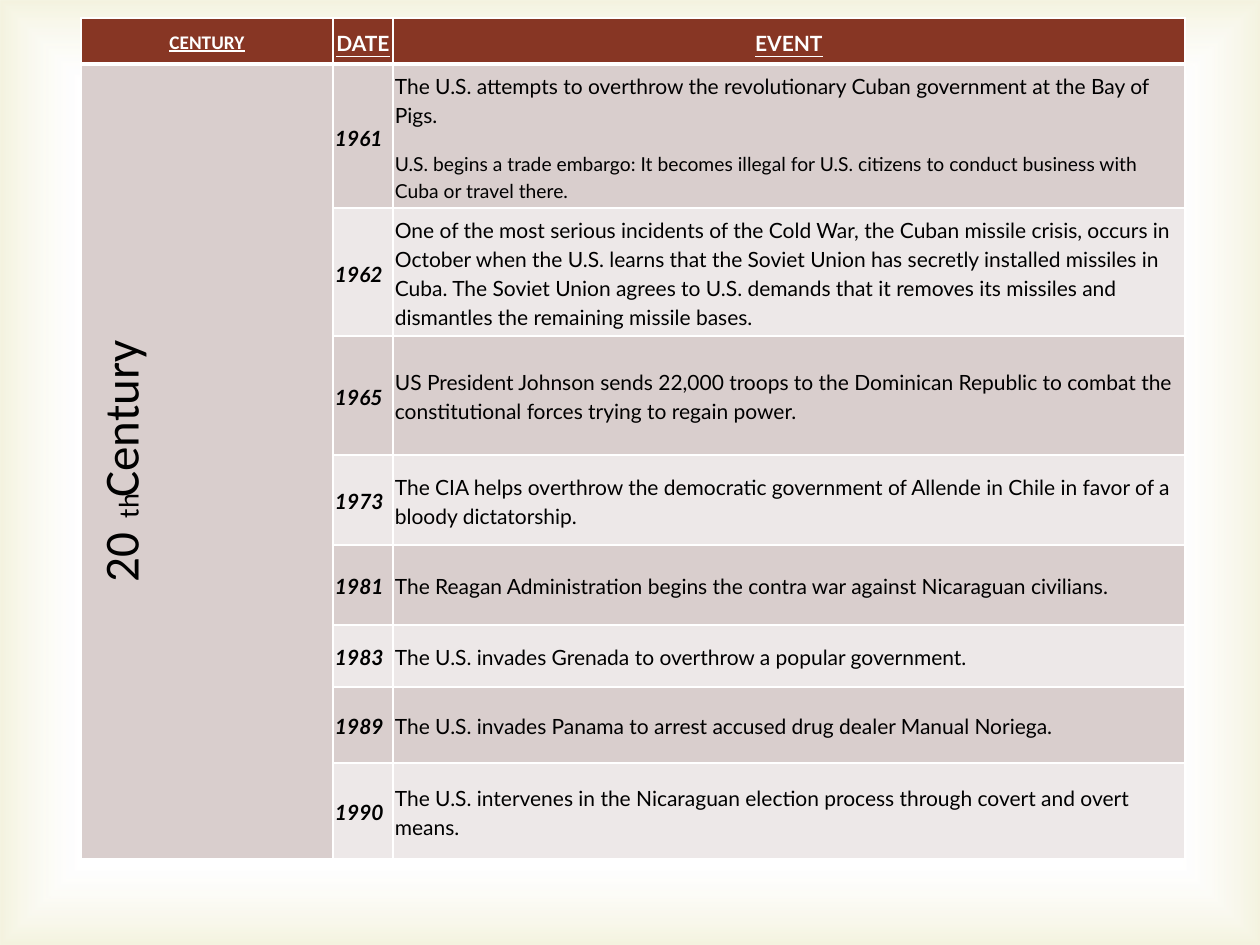
"""Builds a slide with a timeline table of U.S. interventions in the 20th century."""
from lxml.etree import SubElement
from pptx import Presentation
from pptx.dml.color import RGBColor
from pptx.enum.shapes import MSO_SHAPE as Shape
from pptx.enum.text import MSO_ANCHOR as Anchor, PP_ALIGN as Align
from pptx.oxml import parse_xml
from pptx.oxml.ns import nsdecls, qn
from pptx.util import Pt

PX = 914400 // 126
HEADER, DARK, LIGHT = "873624", "D9CECD", "EDE8E8"
WHITE, BLACK, GLOW = "FFFFFF", "000000", "D1CA75"

HEADINGS = [("CENTURY", 11, "Calibri"), ("DATE", 12, "Lato"), ("EVENT", 12, "Lato")]
CENTURY = [("20", 0), ("th", 30000), (" Century", 0)]
EVENTS = [
    ("1961", 144, [
        ("The U.S. attempts to overthrow the revolutionary Cuban government at the Bay of Pigs.", 12),
        ("U.S. begins a trade embargo: It becomes illegal for U.S. citizens to conduct business "
         "with Cuba or travel there.", 11)]),
    ("1962", 128, [
        ("One of the most serious incidents of the Cold War, the Cuban missile crisis, occurs in "
         "October when the U.S. learns that the Soviet Union has secretly installed missiles in "
         "Cuba. The Soviet Union agrees to U.S. demands that it removes its missiles and "
         "dismantles the remaining missile bases.", 12)]),
    ("1965", 119, [
        ("US President Johnson sends 22,000 troops to the Dominican Republic to combat the "
         "constitutional forces trying to regain power.", 12)]),
    ("1973", 90, [
        ("The CIA helps overthrow the democratic government of Allende in Chile in favor of a "
         "bloody dictatorship.", 12)]),
    ("1981", 80, [
        ("The Reagan Administration begins the contra war against Nicaraguan civilians.", 12)]),
    ("1983", 62, [("The U.S. invades Grenada to overthrow a popular government.", 12)]),
    ("1989", 76, [("The U.S. invades Panama to arrest accused drug dealer Manual Noriega.", 12)]),
    ("1990", 96, [
        ("The U.S. intervenes in the Nicaraguan election process through covert and overt means.", 12)]),
]
LEFT, TOP, HEADER_HEIGHT = 81, 18, 46
COLUMNS = [252, 60, 792]


def color(value):
    return RGBColor.from_string(value)


def add_glow(slide, width, height):
    box = slide.shapes.add_shape(Shape.RECTANGLE, 0, 0, width, height)
    box.shadow.inherit = False
    box.line.fill.background()
    stops = "".join(
        f'<a:gs pos="{place}000"><a:srgbClr val="{value}"><a:alpha val="{alpha}000"/></a:srgbClr></a:gs>'
        for place, value, alpha in [(83, WHITE, 11), (100, GLOW, 23)])
    gradient = parse_xml(
        f'<a:gradFill {nsdecls("a")} rotWithShape="1"><a:gsLst>{stops}</a:gsLst><a:path path="rect">'
        '<a:fillToRect l="50000" t="50000" r="50000" b="50000"/></a:path></a:gradFill>')
    box._element.spPr.find(qn("a:prstGeom")).addnext(gradient)


def format_cell(cell, fill, bottom=1):
    cell.fill.solid()
    cell.fill.fore_color.rgb = color(fill)
    cell.vertical_anchor = Anchor.MIDDLE
    cell.margin_left = cell.margin_right = cell.margin_top = cell.margin_bottom = 2 * PX
    properties = cell._tc.get_or_add_tcPr()
    for index, (side, width) in enumerate([("L", 1), ("R", 1), ("T", 1), ("B", bottom)]):
        border = parse_xml(f'<a:ln{side} {nsdecls("a")} w="{Pt(width)}"/>')
        SubElement(SubElement(border, qn("a:solidFill")), qn("a:srgbClr")).set("val", WHITE)
        properties.insert(index, border)


def add_para(cell, align=Align.LEFT):
    frame = cell.text_frame
    para = frame.add_paragraph() if frame.text else frame.paragraphs[0]
    para.alignment, para.line_spacing, para.space_after = align, 1.15, Pt(12)
    return para


def add_text(para, text, size=12, font="Lato", ink=BLACK, bold=False, italic=False,
             underline=False, baseline=0):
    span = para.add_run()
    span.text = text
    span.font.size, span.font.name = Pt(size), font
    span.font.bold, span.font.italic, span.font.underline = bold, italic, underline
    span.font.color.rgb = color(ink)
    if baseline:
        span._r.get_or_add_rPr().set("baseline", str(baseline))


def add_timeline(slide):
    heights = [HEADER_HEIGHT] + [height for _, height, _ in EVENTS]
    frame = slide.shapes.add_table(len(heights), len(COLUMNS), LEFT * PX, TOP * PX,
                                   sum(COLUMNS) * PX, sum(heights) * PX)
    table = frame.table
    for column, width in zip(table.columns, COLUMNS):
        column.width = width * PX
    for row, height in zip(table.rows, heights):
        row.height = height * PX

    for index, (text, size, font) in enumerate(HEADINGS):
        cell = table.cell(0, index)
        format_cell(cell, HEADER, bottom=3)
        add_text(add_para(cell, Align.CENTER), text, size=size, font=font, ink=WHITE,
                 bold=True, underline=True)

    for index, (year, _, paragraphs) in enumerate(EVENTS, 1):
        century, date, event = table.rows[index].cells
        fill = DARK if index % 2 else LIGHT
        format_cell(century, DARK)
        format_cell(date, fill)
        format_cell(event, fill)
        add_text(add_para(date), year, bold=True, italic=True)
        for text, size in paragraphs:
            add_text(add_para(event), text, size=size)

    century = table.cell(1, 0)
    century.merge(table.cell(len(EVENTS), 0))
    century._tc.get_or_add_tcPr().set("vert", "vert270")
    para = add_para(century, Align.CENTER)
    for text, baseline in CENTURY:
        add_text(para, text, size=28, font="Calibri", baseline=baseline)


def main():
    deck = Presentation()
    deck.slide_width, deck.slide_height = 1260 * PX, 945 * PX
    page = deck.slides.add_slide(deck.slide_layouts[6])
    add_glow(page, deck.slide_width, deck.slide_height)
    add_timeline(page)
    deck.save("out.pptx")


if __name__ == "__main__":
    main()
